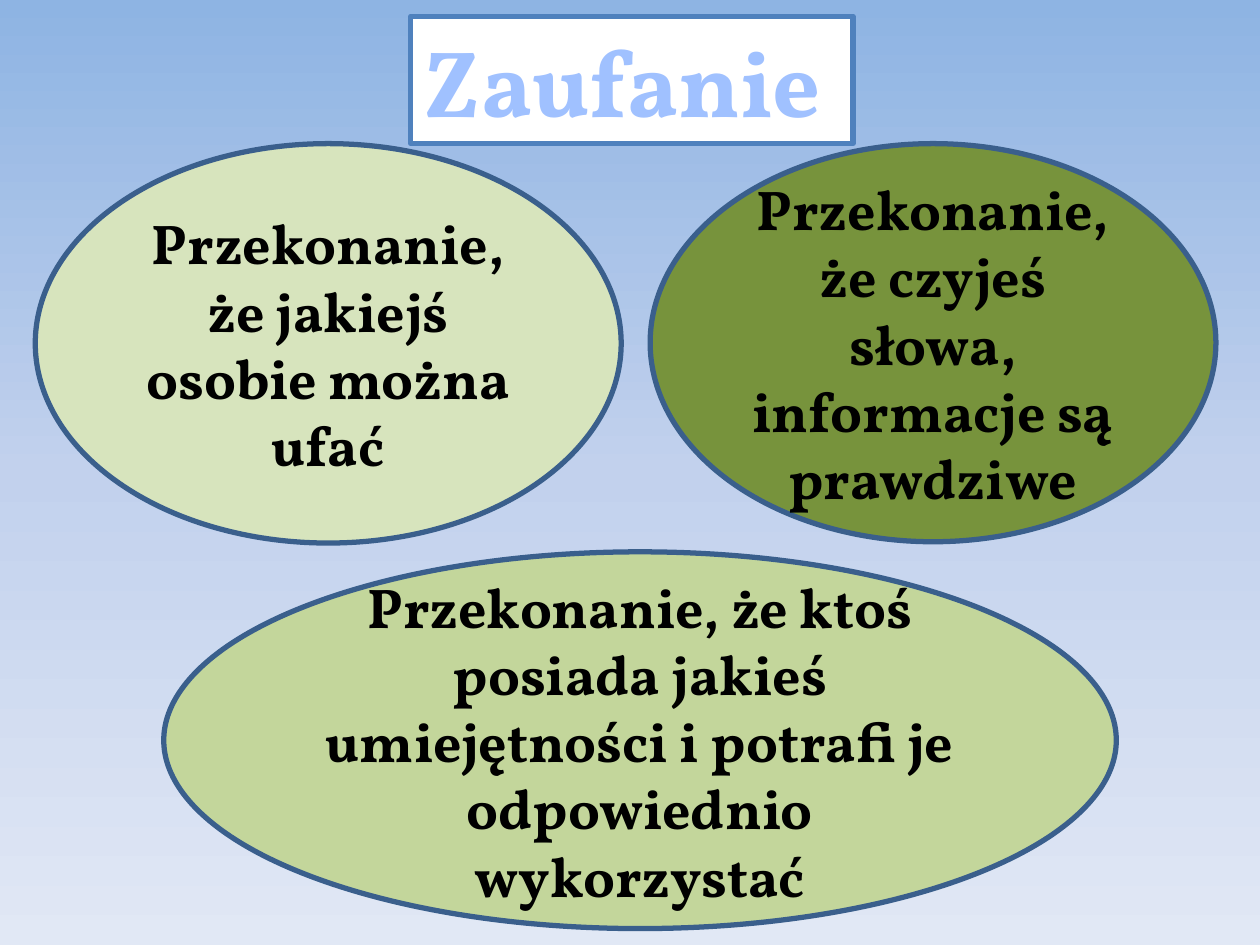
from dataclasses import dataclass

from lxml import etree
from pptx import Presentation
from pptx import util as u
from pptx.dml.color import RGBColor
from pptx.enum import shapes, text
from pptx.oxml.ns import qn


@dataclass(frozen=True)
class Theme:
    font: str = "Vollkorn"
    title_size: int = 54
    body_size: int = 32
    line_width: int = 3
    ink: str = "000000"
    white: str = "FFFFFF"
    title_line: str = "4F81BD"
    oval_line: str = "3A5F8C"
    letter_line: str = "467AB8"
    letter_line_width: float = 0.83
    sky: tuple = ((0, "8EB4E3"), (50, "C2D1ED"), (100, "E1E8F5"))
    letters: tuple = ((0, "BFD3F9"), (9, "A0C1FF"), (50, "003D85"),
                      (79, "A0C1FF"), (100, "BFD3F9"))


THEME = Theme()

OVALS = (
    ((0.28, 1.14, 4.65, 3.17), "D7E4BD",
     "Przekonanie, że jakiejś osobie można ufać"),
    ((5.16, 1.14, 4.49, 3.16), "77933C",
     "Przekonanie, że czyjeś słowa, informacje są prawdziwe"),
    ((1.3, 4.38, 7.56, 2.99), "C3D69B",
     "Przekonanie, że ktoś posiada jakieś umiejętności i potrafi je "
     "odpowiednio wykorzystać"),
)


def apply_format(target, values):
    for name, value in values.items():
        setattr(target, name, value)


def paint(fill, color):
    fill.solid()
    fill.fore_color.rgb = RGBColor.from_string(color)


def paint_gradient(fill, element, stops):
    fill.gradient()
    fill.gradient_angle = 270
    stop_list = next(element.iter(qn("a:gsLst")))
    for stop in list(stop_list):
        stop_list.remove(stop)
    for percent, color in stops:
        stop = etree.SubElement(stop_list, qn("a:gs"), pos=str(percent * 1000))
        etree.SubElement(stop, qn("a:srgbClr"), val=color)


def outline_letters(span, color, width):
    line = etree.Element(qn("a:ln"), w=str(u.Pt(width)))
    solid = etree.SubElement(line, qn("a:solidFill"))
    etree.SubElement(solid, qn("a:srgbClr"), val=color)
    span.font.fill
    span.font._element.insert(0, line) if hasattr(span.font, "_element") else \
        span._r.get_or_add_rPr().insert(0, line)


def add_label(page, kind, place, fill, line, words, size, frame_format):
    box = page.shapes.add_shape(kind, *map(u.Inches, place))
    box.shadow.inherit = False
    paint(box.fill, fill)
    paint(box.line.fill, line)
    box.line.width = u.Pt(THEME.line_width)
    apply_format(box.text_frame, frame_format)
    para = box.text_frame.paragraphs[0]
    para.alignment = text.PP_ALIGN.CENTER
    span = para.add_run()
    span.text = words
    apply_format(span.font, {"name": THEME.font, "size": u.Pt(size), "bold": True})
    return span


def add_title(page):
    span = add_label(
        page, shapes.MSO_SHAPE.RECTANGLE, (3.26, 0.13, 3.51, 1.01),
        THEME.white, THEME.title_line, "Zaufanie ", THEME.title_size,
        {"word_wrap": False, "vertical_anchor": text.MSO_ANCHOR.TOP,
         "auto_size": text.MSO_AUTO_SIZE.SHAPE_TO_FIT_TEXT})
    paint_gradient(span.font.fill, span._r, THEME.letters)
    outline_letters(span, THEME.letter_line, THEME.letter_line_width)


def add_oval(page, place, fill, words):
    span = add_label(
        page, shapes.MSO_SHAPE.OVAL, place, fill, THEME.oval_line, words,
        THEME.body_size,
        {"word_wrap": True, "vertical_anchor": text.MSO_ANCHOR.MIDDLE})
    paint(span.font.fill, THEME.ink)


def main():
    deck = Presentation()
    apply_format(deck, {"slide_width": u.Inches(10), "slide_height": u.Inches(7.5)})
    page = deck.slides.add_slide(deck.slide_layouts[6])
    paint_gradient(page.background.fill, page.element, THEME.sky)
    add_title(page)
    for place, fill, words in OVALS:
        add_oval(page, place, fill, words)
    deck.save("out.pptx")


if __name__ == "__main__":
    main()
